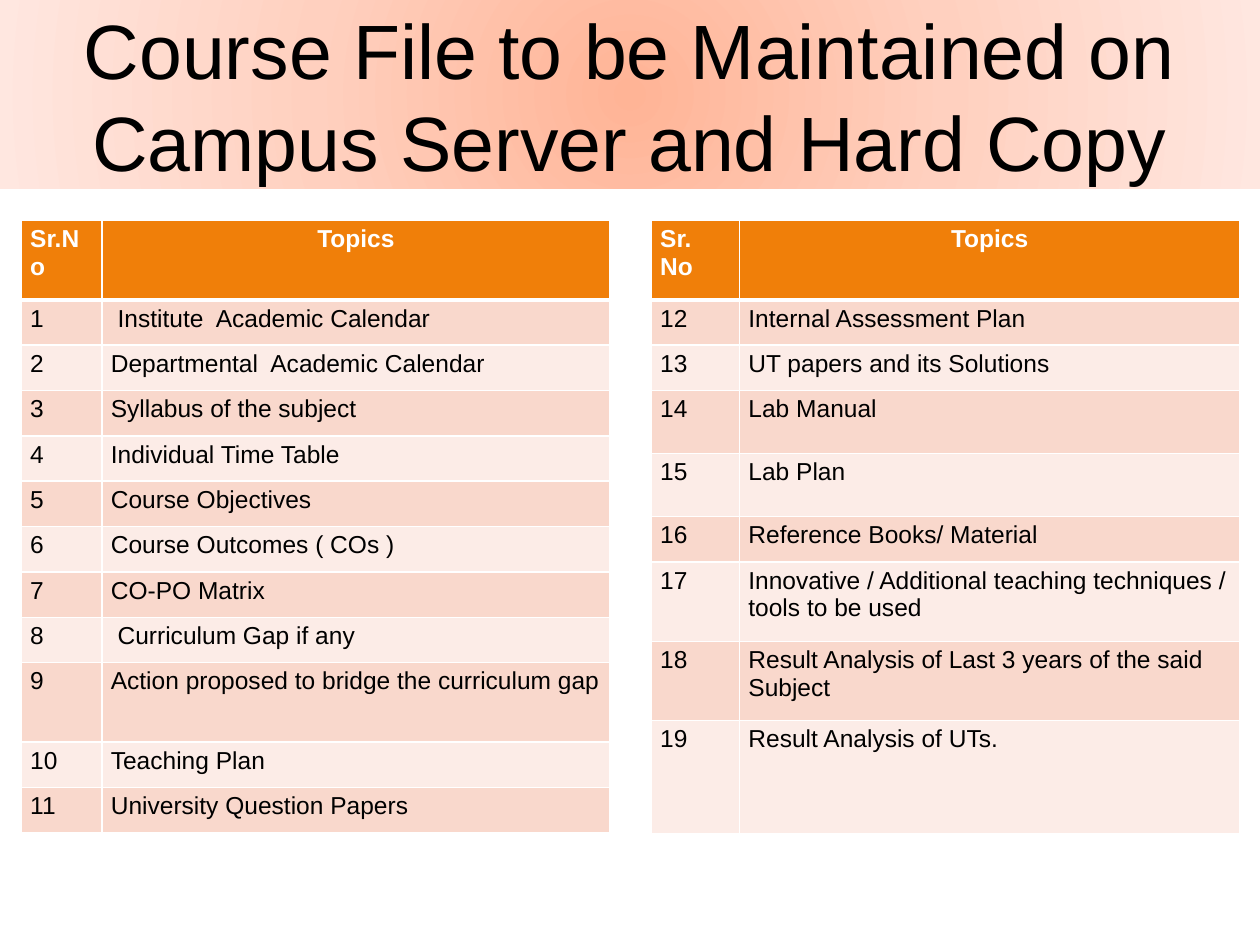
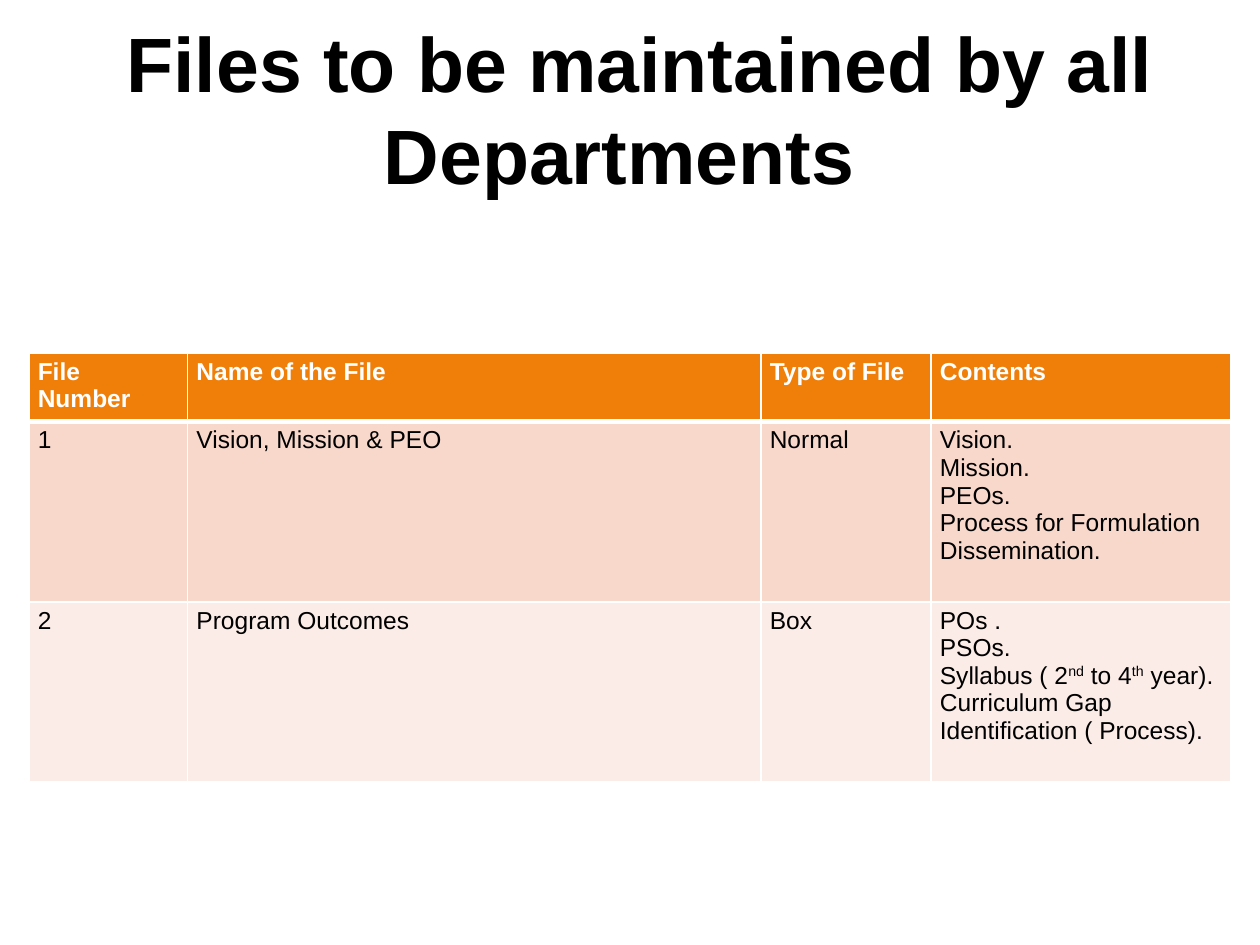
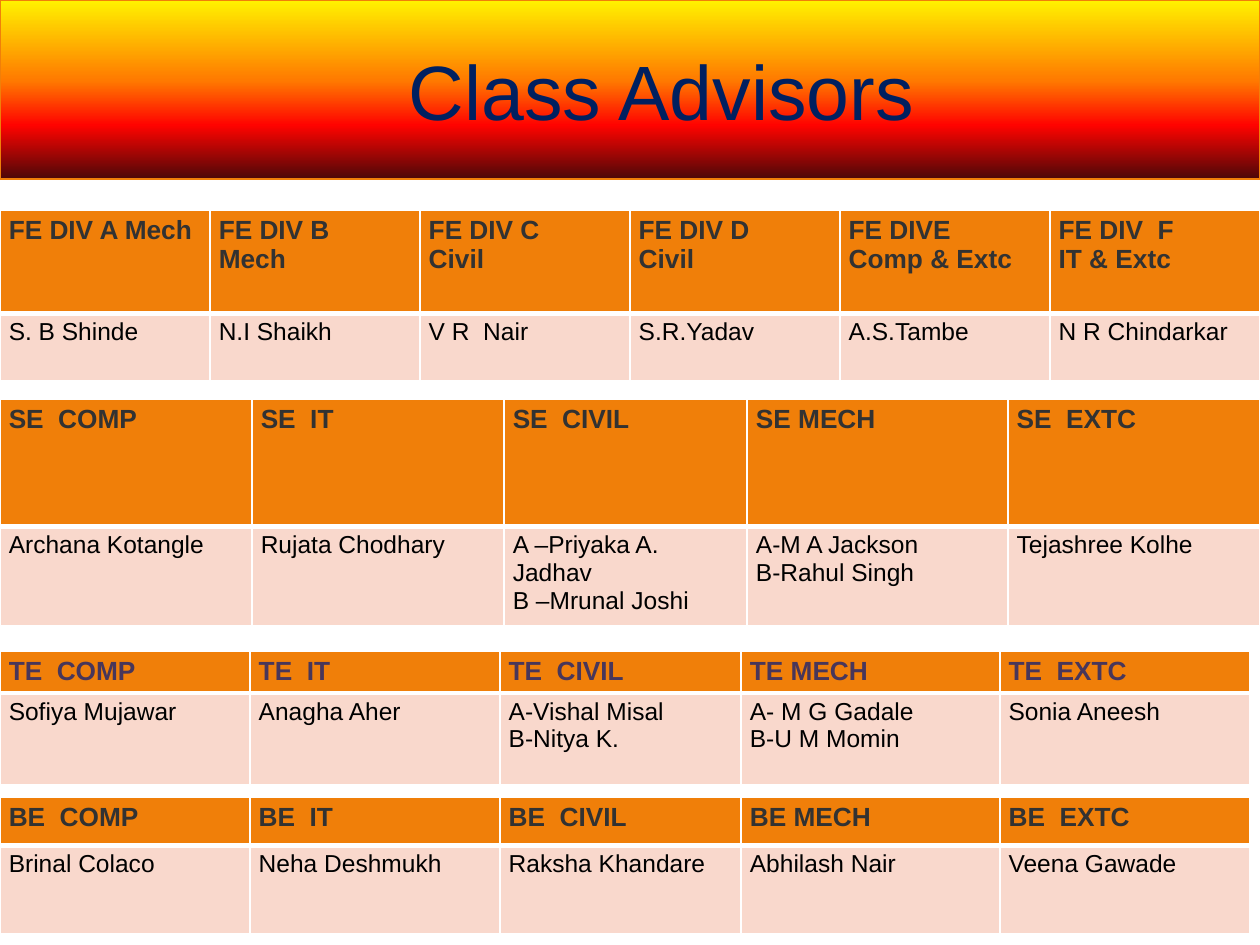
from lxml import etree
from pptx import Presentation
from pptx.dml.color import RGBColor
from pptx.enum.shapes import MSO_SHAPE
from pptx.enum.text import MSO_ANCHOR, PP_ALIGN
from pptx.oxml.ns import qn
from pptx.util import Inches, Pt

RECTANGLE = MSO_SHAPE.RECTANGLE
MIDDLE = MSO_ANCHOR.MIDDLE
LEFT, CENTER = PP_ALIGN.LEFT, PP_ALIGN.CENTER

FONT = "Arial"
COLORS = {
    "black": "000000",
    "white": "FFFFFF",
    "navy": "002060",
    "charcoal": "323232",
    "plum": "48365A",
    "header": "F07F09",
    "odd": "F9D8CC",
    "even": "FCECE7",
}
PEACH = [(0, "FFB496"), (50, "FFD0BF"), (100, "FFE7E0")]
FIRE = [(0, "FFF200"), (45, "FF7A00"), (70, "FF0300"), (100, "4D0808")]

COURSE_TOPICS = [
    " Institute  Academic Calendar",
    "Departmental  Academic Calendar",
    "Syllabus of the subject",
    "Individual Time Table",
    "Course Objectives",
    "Course Outcomes ( COs )",
    "CO-PO Matrix",
    " Curriculum Gap if any",
    "Action proposed to bridge the curriculum gap",
    "Teaching Plan",
    "University Question Papers",
    "Internal Assessment Plan",
    "UT papers and its Solutions",
    "Lab Manual",
    "Lab Plan",
    "Reference Books/ Material",
    "Innovative / Additional teaching techniques / tools to be used",
    "Result Analysis of Last 3 years of the said Subject",
    "Result Analysis of UTs.",
]
DEPARTMENT_FILES = [
    ["File Number", "Name of the File", "Type of File", "Contents"],
    ["1", "Vision, Mission & PEO", "Normal",
     "Vision.\nMission.\nPEOs.\nProcess for Formulation\nDissemination."],
    ["2", "Program Outcomes", "Box",
     "POs .\nPSOs.\nSyllabus ( 2^nd^ to 4^th^ year).\n"
     "Curriculum Gap Identification ( Process)."],
]
FIRST_YEAR = [
    ["FE DIV A Mech", "FE DIV B\nMech", "FE DIV C\nCivil", "FE DIV D\nCivil",
     "FE DIVE\nComp & Extc", "FE DIV  F\nIT & Extc"],
    ["S. B Shinde", "N.I Shaikh", "V R  Nair", "S.R.Yadav", "A.S.Tambe",
     "N R Chindarkar"],
]
BRANCHES = ["  COMP", "  IT", "  CIVIL", " MECH", "  EXTC"]
BRANCH_SHARES = [0.2, 0.2, 0.193, 0.207, 0.2]
BRANCH_YEARS = [
    ("SE", 3.17, 10, [1.01, 0.79], "charcoal",
     ["Archana Kotangle", "Rujata Chodhary",
      "A –Priyaka A. Jadhav\nB –Mrunal Joshi",
      "A-M A Jackson\nB-Rahul Singh", "Tejashree Kolhe"]),
    ("TE", 5.17, 9.92, [0.33, 0.73], "plum",
     ["Sofiya Mujawar", "Anagha Aher", "A-Vishal Misal\nB-Nitya K.",
      "A- M G Gadale\nB-U M Momin", "Sonia Aneesh"]),
    ("BE", 6.33, 9.92, [0.38, 0.7], "charcoal",
     ["Brinal Colaco", "Neha Deshmukh", "Raksha Khandare", "Abhilash Nair",
      "Veena Gawade"]),
]


def rgb(name):
    return RGBColor.from_string(COLORS[name])


def write(frame, text, size=14, color="black", bold=False, align=LEFT):
    frame.word_wrap = True
    for index, line in enumerate(text.split("\n")):
        paragraph = frame.paragraphs[0] if index == 0 else frame.add_paragraph()
        paragraph.alignment = align
        for part, words in enumerate(line.split("^")):
            run = paragraph.add_run()
            run.text = words
            run.font.name = FONT
            run.font.size = Pt(size)
            run.font.bold = bold
            run.font.color.rgb = rgb(color)
            if part % 2:
                run.font._element.set("baseline", "30000")


def add_xml(parent, tag, **attributes):
    return etree.SubElement(parent, qn(tag), attributes)


class Deck:
    def __init__(self):
        self.presentation = Presentation()
        self.presentation.slide_width = Inches(10)
        self.presentation.slide_height = Inches(7.5)
        self.slide = None

    def new_slide(self):
        blank = self.presentation.slide_layouts[6]
        self.slide = self.presentation.slides.add_slide(blank)

    def title(self, text, top, height, color="black", bold=False, indent=0):
        heading = self.slide.shapes.add_textbox(
            Inches(0), Inches(top), Inches(10), Inches(height))
        self.fill_title(heading, text, color, bold, indent)

    def band_title(self, text, height, stops, radial=False, outline=None,
                   color="black", indent=0):
        band = self.slide.shapes.add_shape(
            RECTANGLE, Inches(0), Inches(0), Inches(10), Inches(height))
        band.shadow.inherit = False
        self.gradient(band, stops, radial)
        if outline:
            band.line.color.rgb = rgb(outline)
            band.line.width = Pt(0.75)
        else:
            band.line.fill.background()
        self.fill_title(band, text, color, False, indent)

    def fill_title(self, shape, text, color, bold, indent):
        shape.text_frame.vertical_anchor = MIDDLE
        shape.text_frame.margin_left = Inches(0.1 + indent)
        write(shape.text_frame, text, size=44, color=color, bold=bold, align=CENTER)

    def gradient(self, shape, stops, radial):
        shape.fill.gradient()
        gradient = shape._element.spPr.find(qn("a:gradFill"))
        for child in list(gradient):
            gradient.remove(child)
        stop_list = add_xml(gradient, "a:gsLst")
        for position, color in stops:
            stop = add_xml(stop_list, "a:gs", pos=str(position * 1000))
            add_xml(stop, "a:srgbClr", val=color)
        if radial:
            center = add_xml(gradient, "a:path", path="circle")
            add_xml(center, "a:fillToRect", **dict.fromkeys("ltrb", "50000"))
        else:
            add_xml(gradient, "a:lin", ang="5400000", scaled="0")

    def table(self, rows, left, top, widths, heights, header_size=14,
              header_color="white", centered=()):
        grid = self.slide.shapes.add_table(
            len(rows), len(widths), Inches(left), Inches(top),
            Inches(sum(widths)), Inches(sum(heights))).table
        grid.horz_banding = False
        for column, width in zip(grid.columns, widths):
            column.width = Inches(width)
        for index, (row, height) in enumerate(zip(rows, heights)):
            grid.rows[index].height = Inches(height)
            for column, text in enumerate(row):
                cell = grid.cell(index, column)
                cell.margin_left = cell.margin_right = Inches(0.07)
                cell.margin_top = cell.margin_bottom = Inches(0.04)
                self.borders(cell, top=3 if index == 1 else 1,
                             bottom=3 if index == 0 else 1)
                cell.fill.solid()
                if index == 0:
                    cell.fill.fore_color.rgb = rgb("header")
                    write(cell.text_frame, text, size=header_size,
                          color=header_color, bold=True,
                          align=CENTER if column in centered else LEFT)
                else:
                    cell.fill.fore_color.rgb = rgb("odd" if index % 2 else "even")
                    write(cell.text_frame, text)

    def borders(self, cell, top, bottom):
        properties = cell._tc.get_or_add_tcPr()
        for side, width in (("L", 1), ("R", 1), ("T", top), ("B", bottom)):
            line = add_xml(properties, "a:ln" + side, w=str(Pt(width)))
            add_xml(add_xml(line, "a:solidFill"), "a:srgbClr", val=COLORS["white"])


def course_file_slide(deck):
    deck.new_slide()
    deck.band_title("Course File to be Maintained on Campus Server and Hard Copy",
                    1.5, PEACH, radial=True)
    numbered = [[str(number), topic] for number, topic in enumerate(COURSE_TOPICS, 1)]
    single, double = 0.36, 0.63
    deck.table([["Sr.No", "Topics"]] + numbered[:11], 0.17, 1.75, [0.64, 4.03],
               [double] + [single] * 8 + [double] + [single] * 2, centered=(1,))
    deck.table([["Sr. No", "Topics"]] + numbered[11:], 5.17, 1.75, [0.7, 3.97],
               [double, single, single, 0.5, 0.5, single, double, double, 0.9],
               centered=(1,))


def department_files_slide(deck):
    deck.new_slide()
    deck.title(" Files to be maintained by all Departments ", -0.04, 1.79, bold=True)
    deck.table(DEPARTMENT_FILES, 0.23, 2.8, [1.26, 4.55, 1.35, 2.38],
               [0.5, 1.43, 1.43])


def class_advisors_slide(deck):
    deck.new_slide()
    deck.band_title("Class Advisors", 1.42, FIRE, outline="header", color="navy",
                    indent=0.5)
    deck.table(FIRST_YEAR, 0, 1.67, [10 / 6] * 6, [0.82, 0.53], header_size=15,
               header_color="charcoal")
    for year, top, width, heights, color, advisors in BRANCH_YEARS:
        deck.table([[year + branch for branch in BRANCHES], advisors], 0, top,
                   [width * share for share in BRANCH_SHARES], heights,
                   header_size=15, header_color=color)


def main():
    deck = Deck()
    course_file_slide(deck)
    department_files_slide(deck)
    class_advisors_slide(deck)
    deck.presentation.save("out.pptx")


if __name__ == "__main__":
    main()
